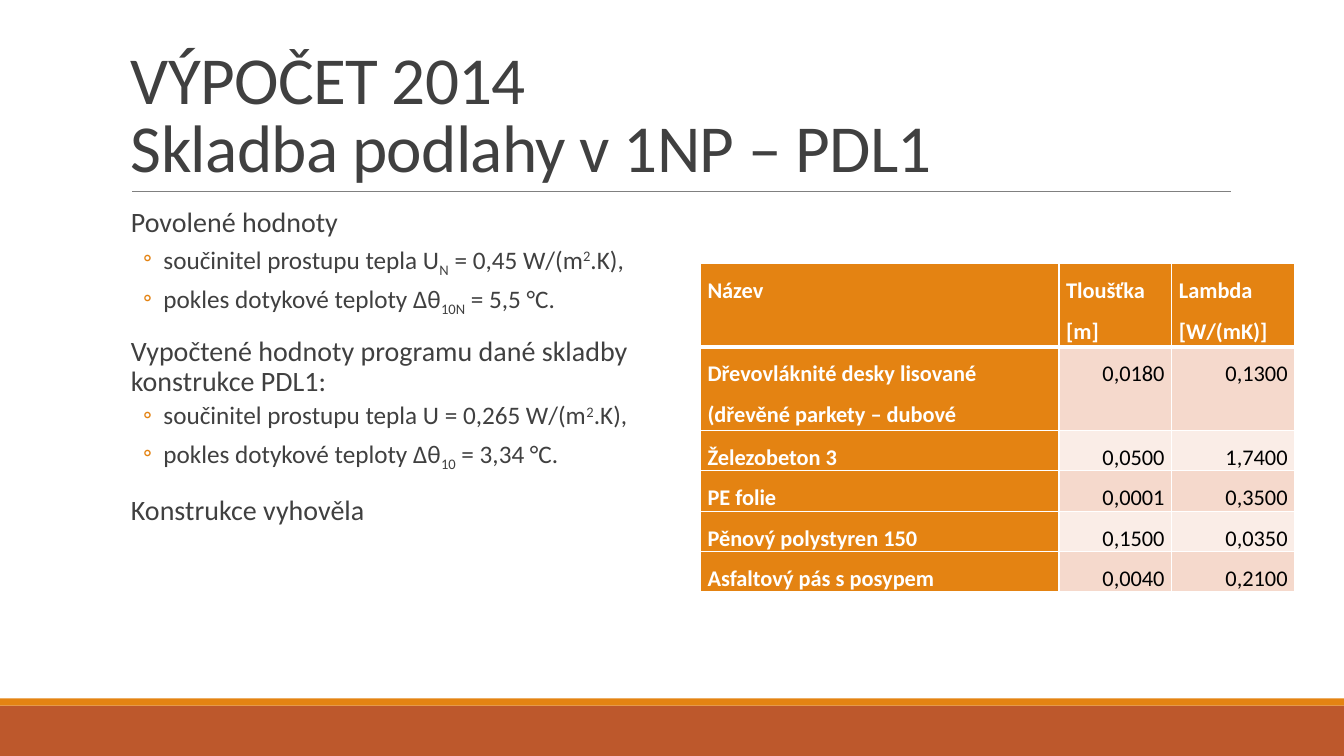
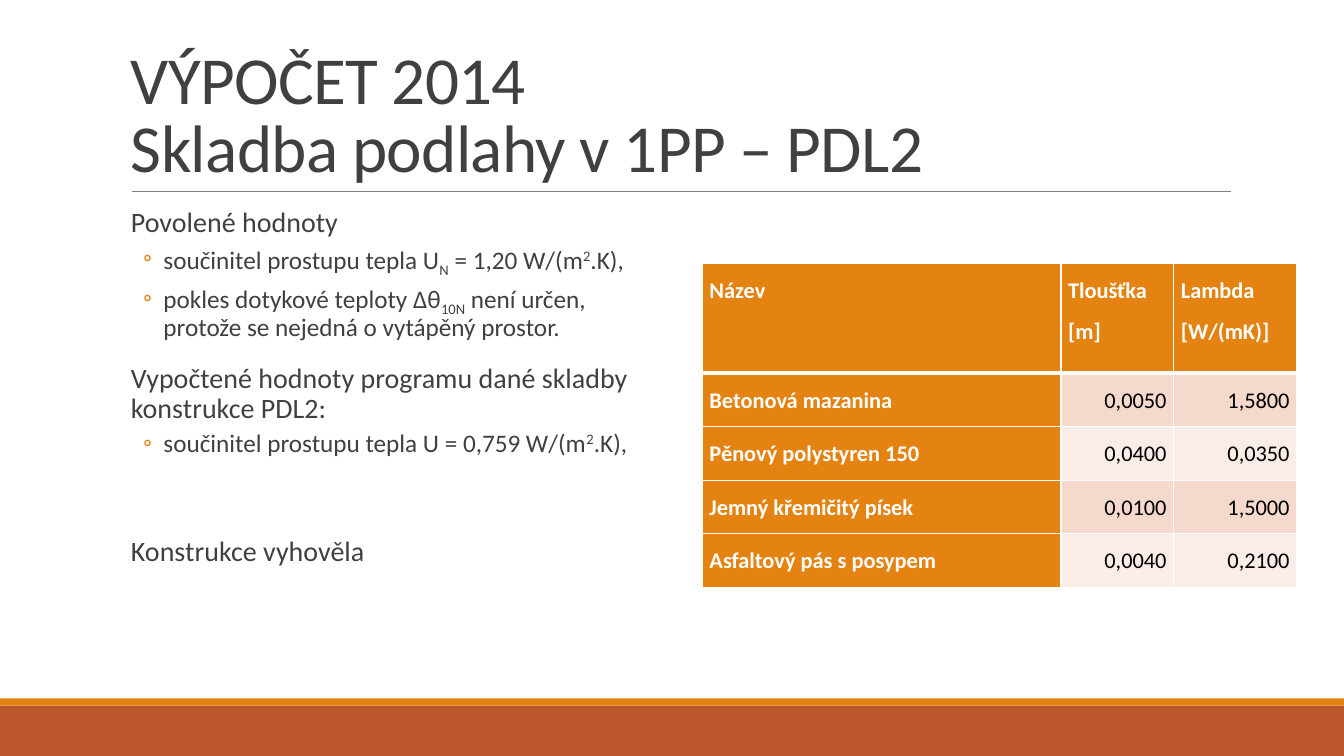
from lxml import etree
from pptx import Presentation
from pptx.dml.color import RGBColor
from pptx.enum.shapes import MSO_CONNECTOR, MSO_SHAPE
from pptx.enum.text import MSO_ANCHOR, PP_ALIGN
from pptx.oxml.ns import qn
from pptx.util import Cm, Pt

RECTANGLE = MSO_SHAPE.RECTANGLE
STRAIGHT = MSO_CONNECTOR.STRAIGHT
BOTTOM = MSO_ANCHOR.BOTTOM
RIGHT = PP_ALIGN.RIGHT

# Shared look
FONT = "Calibri"
TEXT = "404040"
ORANGE = "E48312"
RUST = "BD582C"
GREY = "808080"
WHITE = "FFFFFF"
BLACK = "000000"
ROW_FILLS = ["F5D9CC", "FAEDE7"]
BANDS = [(17.78, 1.27, RUST), (17.6, 0.18, ORANGE)]
COLUMN_WIDTHS = [9.04, 2.84, 3.1]
HEADER = ["Název", "Tloušťka [m]", "Lambda\n[W/(mK)]"]
SUB, SUPER = -25, 30

# Paragraph kinds: size, line spacing, space before, space after
KINDS = {
    "heading": (20, 0.9, 12, 2),
    "bullet": (18, 0.9, 2, 4),
    "result": (20, 1.0, 12, 2),
    "late result": (20, 1.0, 50, 2),
}

# Slide contents
SLIDES = [
    {
        "title": "Skladba podlahy v 1NP – PDL1",
        "body": [
            ("heading", [("Povolené hodnoty", 0)]),
            ("bullet", [("součinitel prostupu tepla U", 0), ("N", SUB),
                        (" = 0,45 W/(m", 0), ("2", SUPER), (".K),", 0)]),
            ("bullet", [("pokles dotykové teploty Δθ", 0), ("10N", SUB),
                        (" = 5,5 °C.", 0)]),
            ("heading", [("Vypočtené hodnoty programu dané skladby "
                          "konstrukce PDL1:", 0)]),
            ("bullet", [("součinitel prostupu tepla U = 0,265 W/(m", 0),
                        ("2", SUPER), (".K),", 0)]),
            ("bullet", [("pokles dotykové teploty Δθ", 0), ("10", SUB),
                        (" = 3,34 °C.", 0)]),
            ("result", [("Konstrukce vyhověla", 0)]),
        ],
        "table_left": 17.65,
        "row_heights": [2.11, 2.11, 0.99, 0.99, 0.99, 0.99],
        "layers": [
            ["Dřevovláknité desky lisované (dřevěné parkety – dubové", "0,0180", "0,1300"],
            ["Železobeton 3", "0,0500", "1,7400"],
            ["PE folie", "0,0001", "0,3500"],
            ["Pěnový polystyren 150", "0,1500", "0,0350"],
            ["Asfaltový pás s posypem", "0,0040", "0,2100"],
        ],
    },
    {
        "title": "Skladba podlahy v 1PP – PDL2",
        "body": [
            ("heading", [("Povolené hodnoty", 0)]),
            ("bullet", [("součinitel prostupu tepla U", 0), ("N", SUB),
                        (" = 1,20 W/(m", 0), ("2", SUPER), (".K),", 0)]),
            ("bullet", [("pokles dotykové teploty Δθ", 0), ("10N", SUB),
                        (" není určen, protože se nejedná o vytápěný prostor.", 0)]),
            ("heading", [("Vypočtené hodnoty programu dané skladby "
                          "konstrukce PDL2:", 0)]),
            ("bullet", [("součinitel prostupu tepla U = 0,759 W/(m", 0),
                        ("2", SUPER), (".K),", 0)]),
            ("late result", [("Konstrukce vyhověla", 0)]),
        ],
        "table_left": 17.7,
        "row_heights": [2.77, 1.35, 1.35, 1.35, 1.35],
        "layers": [
            ["Betonová mazanina", "0,0050", "1,5800"],
            ["Pěnový polystyren 150", "0,0400", "0,0350"],
            ["Jemný křemičitý písek", "0,0100", "1,5000"],
            ["Asfaltový pás s posypem", "0,0040", "0,2100"],
        ],
    },
]


def color(value):
    return RGBColor.from_string(value)


def add_run(paragraph, text, size, text_color, bold=False):
    run = paragraph.add_run()
    run.text = text
    run.font.name = FONT
    run.font.size = Pt(size)
    run.font.bold = bold
    run.font.color.rgb = color(text_color)
    return run._r.get_or_add_rPr()


presentation = Presentation()
presentation.slide_width = Cm(33.87)
presentation.slide_height = Cm(19.05)

for content in SLIDES:
    slide = presentation.slides.add_slide(presentation.slide_layouts[6])

    # Bottom bands
    for top, height, fill in BANDS:
        band = slide.shapes.add_shape(
            RECTANGLE, 0, Cm(top), presentation.slide_width, Cm(height))
        band.shadow.inherit = False
        band.fill.solid()
        band.fill.fore_color.rgb = color(fill)
        band.line.fill.background()

    # Rule under the title
    rule = slide.shapes.add_connector(
        STRAIGHT, Cm(3.33), Cm(4.83), Cm(31.01), Cm(4.83))
    rule.line.color.rgb = color(GREY)
    rule.line.width = Pt(0.5)
    etree.SubElement(rule._element.spPr, qn("a:effectLst"))

    # Title
    title = slide.shapes.add_textbox(Cm(3.05), Cm(0.79), Cm(27.94), Cm(4.03))
    title.text_frame.word_wrap = True
    title.text_frame.vertical_anchor = BOTTOM
    paragraph = title.text_frame.paragraphs[0]
    paragraph.line_spacing = 0.85
    add_run(paragraph, "VÝPOČET 2014", 48, TEXT).set("spc", "-50")
    paragraph.add_line_break()
    add_run(paragraph, content["title"], 48, TEXT).set("spc", "-50")

    # Permitted and calculated values
    body = slide.shapes.add_textbox(Cm(3.05), Cm(5.13), Cm(13.72), Cm(11.18))
    frame = body.text_frame
    frame.word_wrap = True
    frame.margin_left = frame.margin_right = 0
    for index, (kind, runs) in enumerate(content["body"]):
        paragraph = frame.add_paragraph() if index else frame.paragraphs[0]
        size, spacing, before, after = KINDS[kind]
        paragraph.line_spacing = spacing
        paragraph.space_before = Pt(before if index else 0)
        paragraph.space_after = Pt(after)
        properties = paragraph._p.get_or_add_pPr()
        if kind == "bullet":
            properties.set("marL", str(Cm(1.07)))
            properties.set("indent", str(-Cm(0.51)))
            bullet_color = etree.SubElement(properties, qn("a:buClr"))
            etree.SubElement(bullet_color, qn("a:srgbClr"), val=ORANGE)
            etree.SubElement(properties, qn("a:buFont"), typeface=FONT)
            etree.SubElement(properties, qn("a:buChar"), char="◦")
        else:
            properties.set("marL", str(Cm(0.25)))
        for text, baseline in runs:
            run_properties = add_run(paragraph, text, size, TEXT)
            if baseline:
                run_properties.set("baseline", str(baseline * 1000))

    # Table of floor layers
    rows = [HEADER] + content["layers"]
    heights = content["row_heights"]
    table = slide.shapes.add_table(
        len(rows), len(HEADER), Cm(content["table_left"]), Cm(6.63),
        Cm(sum(COLUMN_WIDTHS)), Cm(sum(heights))).table
    table.horz_banding = False
    for column, width in zip(table.columns, COLUMN_WIDTHS):
        column.width = Cm(width)
    for row_index, (values, height) in enumerate(zip(rows, heights)):
        table.rows[row_index].height = Cm(height)
        for column_index, value in enumerate(values):
            cell = table.cell(row_index, column_index)
            cell.margin_left = cell.margin_right = Cm(0.18)
            cell.margin_top = cell.margin_bottom = 0

            # White borders, thick below the header
            top_width = 3 if row_index == 1 else 1
            bottom_width = 3 if row_index == 0 else 1
            cell_properties = cell._tc.get_or_add_tcPr()
            for side, points in [("L", 1), ("R", 1), ("T", top_width), ("B", bottom_width)]:
                border = etree.SubElement(
                    cell_properties, qn("a:ln" + side), w=str(Pt(points)))
                border_fill = etree.SubElement(border, qn("a:solidFill"))
                etree.SubElement(border_fill, qn("a:srgbClr"), val=WHITE)

            is_label = row_index == 0 or column_index == 0
            cell.fill.solid()
            cell.fill.fore_color.rgb = color(
                ORANGE if is_label else ROW_FILLS[(row_index - 1) % 2])
            for line_index, line in enumerate(value.split("\n")):
                frame = cell.text_frame
                paragraph = frame.add_paragraph() if line_index else frame.paragraphs[0]
                paragraph.line_spacing = 1.5
                if not is_label:
                    paragraph.alignment = RIGHT
                add_run(paragraph, line, 16, WHITE if is_label else BLACK, is_label)

presentation.save("out.pptx")
